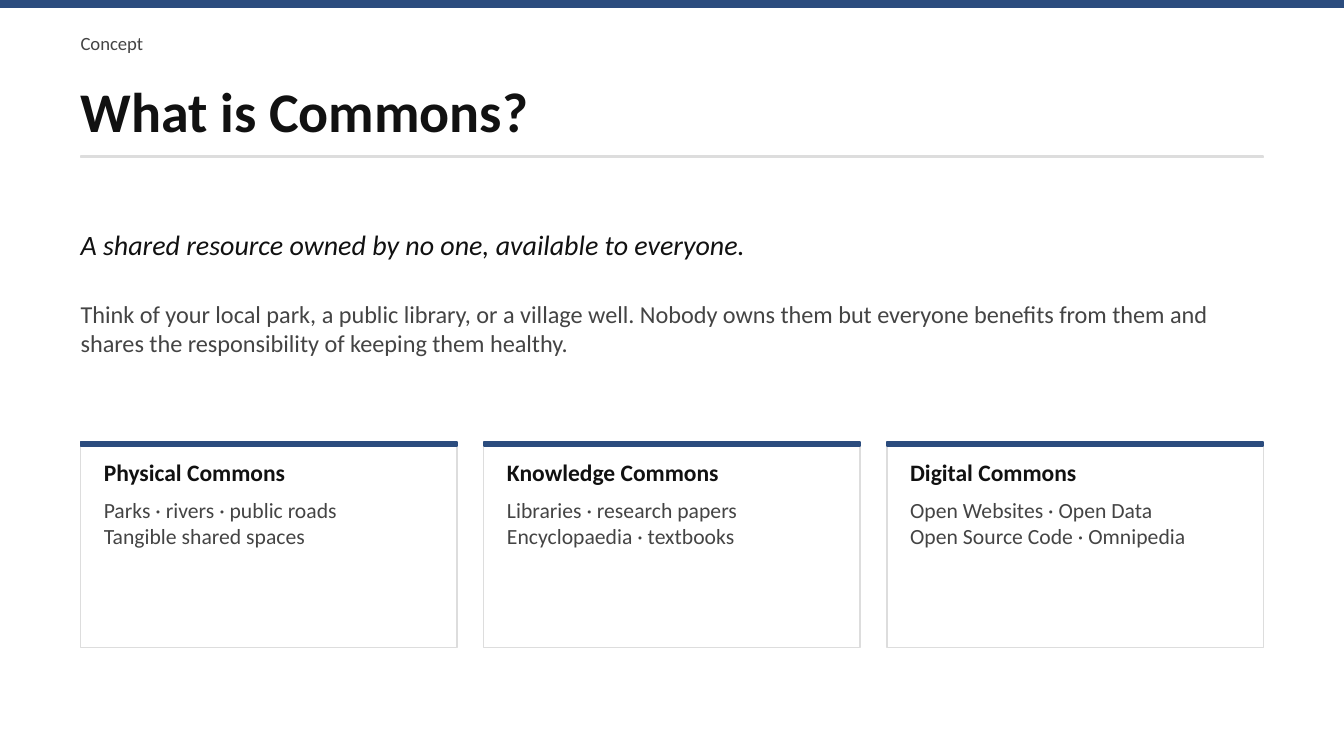
from pptx import Presentation
from pptx.dml.color import RGBColor
from pptx.enum import shapes, text
from pptx.util import Pt

NAVY = RGBColor(0x2B, 0x4C, 0x7E)
INK = RGBColor(0x11, 0x11, 0x11)
GRAY = RGBColor(0x44, 0x44, 0x44)
RULE = RGBColor(0xDD, 0xDD, 0xDD)
WHITE = RGBColor(0xFF, 0xFF, 0xFF)

WIDTH, HEIGHT = 720, 405
MARGIN = 43.2
CONTENT_WIDTH = WIDTH - 2 * MARGIN

# Text, top, width, height, font size, colour, bold, italic
HEADINGS = [
    ("Concept", 13, 648, 20.2, 10, GRAY, False, False),
    ("What is Commons?", 33.1, CONTENT_WIDTH, 51.8, 30, INK, True, False),
    ("A shared resource owned by no one, available to everyone.",
     114.5, CONTENT_WIDTH, 32.4, 15, INK, False, True),
    ("Think of your local park, a public library, or a village well. "
     "Nobody owns them but everyone benefits from them and shares the "
     "responsibility of keeping them healthy.",
     152.6, CONTENT_WIDTH, 46.8, 13, GRAY, False, False),
]

CARDS = [
    ("Physical Commons",
     ["Parks · rivers · public roads", "Tangible shared spaces"]),
    ("Knowledge Commons",
     ["Libraries · research papers", "Encyclopaedia · textbooks"]),
    ("Digital Commons",
     ["Open Websites · Open Data", "Open Source Code · Omnipedia"]),
]
CARD_TOP, CARD_HEIGHT, CARD_GAP, CARD_PAD = 236.9, 110.2, 14.4, 12.4
CARD_WIDTH = (CONTENT_WIDTH - CARD_GAP * (len(CARDS) - 1)) / len(CARDS)


def add_rect(page, left, top, width, height, fill, line, line_width=1):
    rect = page.shapes.add_shape(shapes.MSO_SHAPE.RECTANGLE,
                                 Pt(left), Pt(top), Pt(width), Pt(height))
    rect.shadow.inherit = False
    rect.fill.solid()
    rect.fill.fore_color.rgb = fill
    rect.line.color.rgb = line
    rect.line.width = Pt(line_width)


def add_text(page, lines, left, top, width, height, size, color,
             bold=False, italic=False, anchor=text.MSO_ANCHOR.MIDDLE):
    """Add a text box without insets, one paragraph for each line."""
    box = page.shapes.add_textbox(Pt(left), Pt(top), Pt(width), Pt(height))
    frame = box.text_frame
    frame.word_wrap = True
    frame.vertical_anchor = anchor
    frame.margin_left = frame.margin_right = 0
    frame.margin_top = frame.margin_bottom = 0
    frame.text = "\n".join(lines)
    for para in frame.paragraphs:
        font = para.font
        font.name, font.size = "Calibri", Pt(size)
        font.bold, font.italic = bold, italic
        font.color.rgb = color


def add_card(page, left, title, lines):
    add_rect(page, left, CARD_TOP, CARD_WIDTH, CARD_HEIGHT, WHITE, RULE, 0.72)
    add_rect(page, left, CARD_TOP, CARD_WIDTH, 2.2, NAVY, NAVY, 0.97)
    text_left, text_width = left + CARD_PAD, CARD_WIDTH - 2 * CARD_PAD
    add_text(page, [title], text_left, CARD_TOP + 6.5, text_width, 19.4,
             12.6, INK, bold=True)
    add_text(page, lines, text_left, CARD_TOP + 29.5, text_width, 72.7,
             11.6, GRAY, anchor=text.MSO_ANCHOR.TOP)


def main():
    deck = Presentation()
    deck.slide_width, deck.slide_height = Pt(WIDTH), Pt(HEIGHT)
    page = deck.slides.add_slide(deck.slide_layouts[6])

    add_rect(page, 0, 0, WIDTH, 4, NAVY, NAVY)
    for wording, top, width, height, *style in HEADINGS:
        add_text(page, [wording], MARGIN, top, width, height, *style)
    add_rect(page, MARGIN, 83.5, CONTENT_WIDTH, 0.9, RULE, RULE)
    for index, (title, lines) in enumerate(CARDS):
        add_card(page, MARGIN + index * (CARD_WIDTH + CARD_GAP), title, lines)

    deck.save("out.pptx")


if __name__ == "__main__":
    main()
